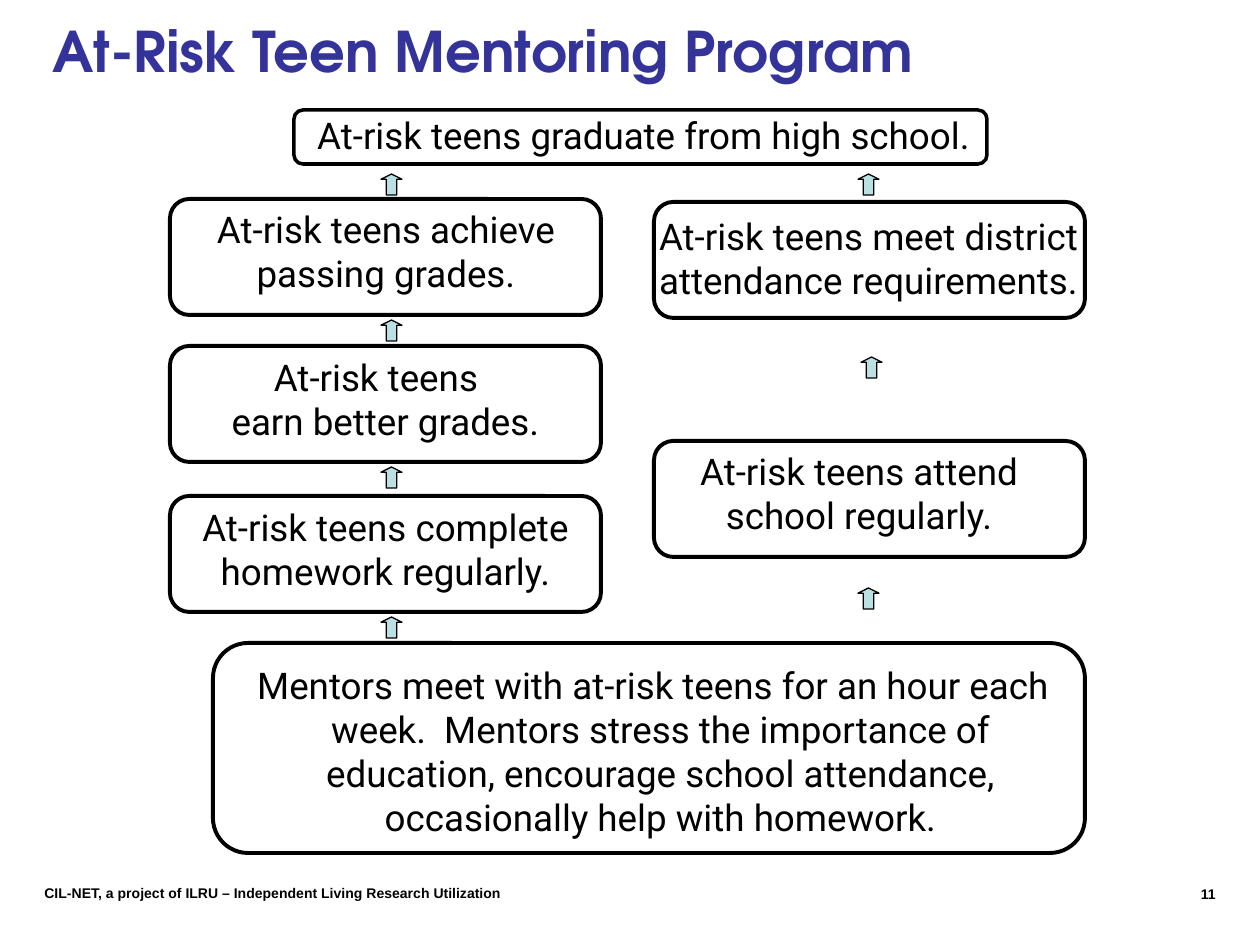
from dataclasses import dataclass

import pptx
import pptx.util
import pptx.dml.color
import pptx.enum.shapes
import pptx.enum.text

EMU_PER_PX = 914400 / 126
BLACK = pptx.dml.color.RGBColor(0x00, 0x00, 0x00)
WHITE = pptx.dml.color.RGBColor(0xFF, 0xFF, 0xFF)
INDIGO = pptx.dml.color.RGBColor(0x33, 0x33, 0x99)
PALE_TEAL = pptx.dml.color.RGBColor(0xBB, 0xE0, 0xE3)

SHAPE = pptx.enum.shapes.MSO_SHAPE
ALIGN = pptx.enum.text.PP_ALIGN
ANCHOR = pptx.enum.text.MSO_ANCHOR

LEFT_X, RIGHT_X = 170, 654
STEP_W, STEP_H, STEP_TEXT_H = 431, 116, 102
ARROW_SIZE = 21


@dataclass(frozen=True)
class Box:
    x: int
    y: int
    w: int
    h: int


@dataclass(frozen=True)
class Step:
    """An outlined box with its text area; hang is the hanging indent."""
    lines: tuple[str, ...]
    frame: Box
    text: Box
    line_pt: float = 2.25
    left_inset: int = 6
    right_inset: int = 6
    hang: int = 0


@dataclass(frozen=True)
class Label:
    text: str
    box: Box
    size: int
    font: str
    color: pptx.dml.color.RGBColor
    align: ALIGN = ALIGN.LEFT


def px(n: float) -> int:
    return round(n * EMU_PER_PX)


def step_frame(x: int, y: int) -> Box:
    return Box(x, y, STEP_W, STEP_H)


STEPS = [
    Step(("Mentors meet with at-risk teens for an hour each week.  Mentors stress "
          "the importance of education, encourage school attendance, occasionally "
          "help with homework.",),
         Box(213, 643, 872, 210), Box(233, 656, 840, 190),
         left_inset=13, right_inset=13, hang=15),
    Step(("At-risk teens achieve", "passing grades."),
         step_frame(LEFT_X, 199), Box(192, 200, 388, STEP_TEXT_H)),
    # The first line sits slightly left of the second
    Step(("At-risk teens\vearn better grades.",),
         step_frame(LEFT_X, 346), Box(LEFT_X, 348, STEP_W, STEP_TEXT_H),
         right_inset=25, hang=19),
    Step(("At-risk teens graduate from high school.",),
         Box(294, 110, 693, 54), Box(276, 106, 735, 57), line_pt=2),
    Step(("At-risk teens meet district attendance requirements.",),
         step_frame(RIGHT_X, 202), Box(643, 207, 451, STEP_TEXT_H)),
    Step(("At-risk teens complete homework regularly.",),
         step_frame(LEFT_X, 496), Box(LEFT_X, 498, STEP_W, STEP_TEXT_H)),
    Step(("At-risk teens attend school regularly.",),
         step_frame(RIGHT_X, 441), Box(RIGHT_X, 442, 410, STEP_TEXT_H)),
]

ARROWS = [(381, 174), (381, 320), (381, 467), (381, 617),
          (858, 174), (861, 357), (858, 588)]

LABELS = [
    Label("At-Risk Teen Mentoring Program", Box(40, 10, 1023, 81),
          32, "TeX Gyre Adventor", INDIGO),
    Label("CIL-NET, a project of ILRU – Independent Living Research Utilization",
          Box(32, 878, 630, 29), 8, "Arial", BLACK),
    Label("11", Box(1144, 879, 84, 34), 8, "Arial", BLACK, ALIGN.RIGHT),
]


def add_outline(s, kind: SHAPE, box: Box, color, line_pt: float, fill=None):
    sp = s.shapes.add_shape(kind, px(box.x), px(box.y), px(box.w), px(box.h))
    sp.shadow.inherit = False
    if fill is None:
        sp.fill.background()
    else:
        sp.fill.solid()
        sp.fill.fore_color.rgb = fill
    sp.line.color.rgb = color
    sp.line.width = pptx.util.Pt(line_pt)
    return sp


def add_step(s, step: Step) -> None:
    sp = add_outline(s, SHAPE.RECTANGLE, step.text, WHITE, 1)
    tf = sp.text_frame
    tf.word_wrap = True
    tf.vertical_anchor = ANCHOR.MIDDLE
    tf.margin_left, tf.margin_right = px(step.left_inset), px(step.right_inset)
    tf.margin_top = tf.margin_bottom = px(6)
    tf.text = "\n".join(step.lines)
    for p in tf.paragraphs:
        p.alignment = ALIGN.CENTER
        if step.hang:
            pPr = p._p.get_or_add_pPr()
            pPr.set("marL", str(px(step.hang)))
            pPr.set("indent", str(-px(step.hang)))
        p.font.size = pptx.util.Pt(21)
        p.font.name = "Roboto"
        p.font.color.rgb = BLACK
    add_outline(s, SHAPE.ROUNDED_RECTANGLE, step.frame, BLACK, step.line_pt)


def add_arrow(s, x: int, y: int) -> None:
    sp = add_outline(s, SHAPE.UP_ARROW, Box(x, y, ARROW_SIZE, ARROW_SIZE),
                     BLACK, 0.75, PALE_TEAL)
    sp.adjustments[0] = 0.5
    sp.adjustments[1] = 0.25


def add_label(s, label: Label) -> None:
    b = label.box
    tf = s.shapes.add_textbox(px(b.x), px(b.y), px(b.w), px(b.h)).text_frame
    tf.word_wrap = True
    p = tf.paragraphs[0]
    p.text = label.text
    p.alignment = label.align
    p.font.size = pptx.util.Pt(label.size)
    p.font.name = label.font
    p.font.bold = True
    p.font.color.rgb = label.color


def main() -> None:
    prs = pptx.Presentation()
    prs.slide_width, prs.slide_height = px(1260), px(945)
    s = prs.slides.add_slide(prs.slide_layouts[6])

    # Title and footer
    for label in LABELS:
        add_label(s, label)

    # Program steps
    for step in STEPS:
        add_step(s, step)

    # Arrows between steps
    for x, y in ARROWS:
        add_arrow(s, x, y)

    prs.save("out.pptx")


if __name__ == "__main__":
    main()
